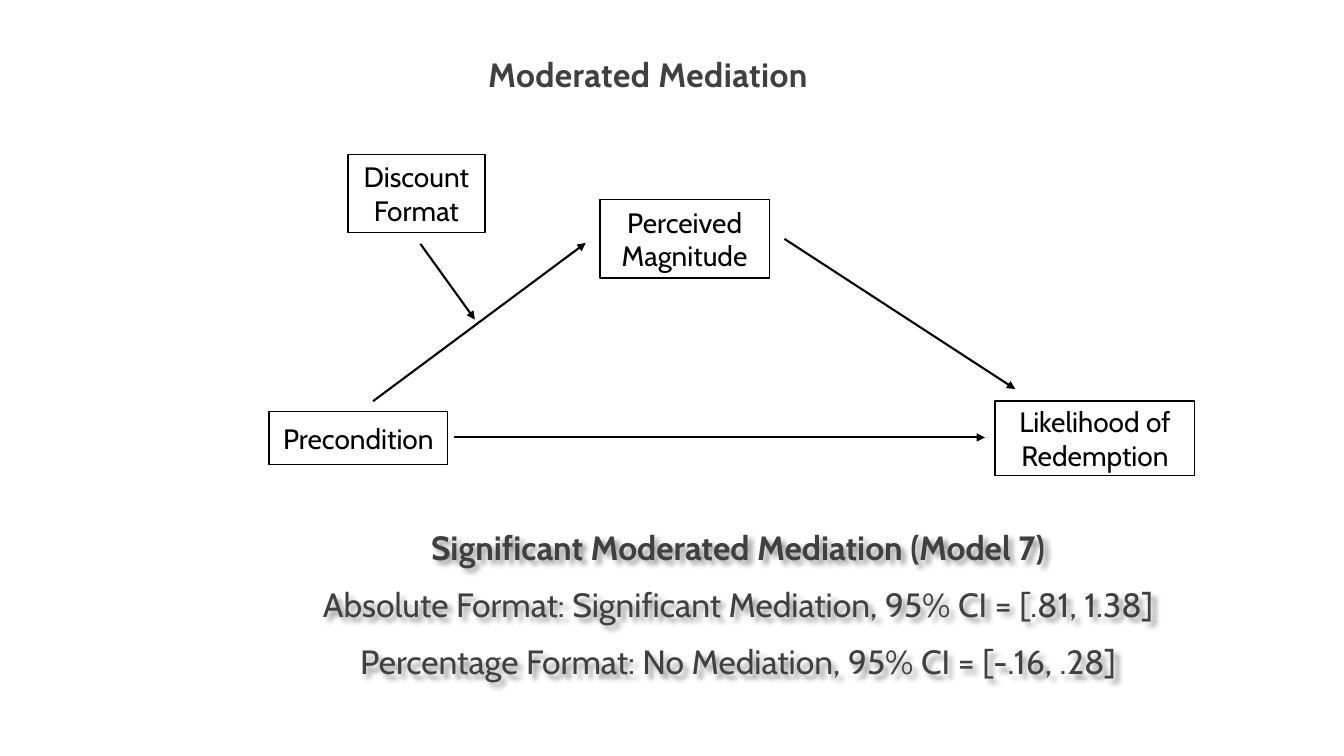
import dataclasses

import lxml.etree
import pptx
import pptx.dml.color
import pptx.enum.shapes
import pptx.enum.text
import pptx.oxml
import pptx.oxml.ns
import pptx.slide
import pptx.text.text
import pptx.util

Inches = pptx.util.Inches
Pt = pptx.util.Pt
ALIGN = pptx.enum.text.PP_ALIGN
ANCHOR = pptx.enum.text.MSO_ANCHOR

FONT = "Cabin"
BLACK = "000000"
GREY = "404040"


@dataclasses.dataclass(frozen=True)
class Variable:
    name: str
    left: float
    top: float
    width: float
    height: float


@dataclasses.dataclass(frozen=True)
class Effect:
    start: tuple[float, float]
    end: tuple[float, float]


VARIABLES = [
    Variable("Precondition", 2.67, 4.08, 1.77, 0.53),
    Variable("Likelihood of Redemption", 9.87, 3.98, 1.98, 0.74),
    Variable("Discount Format", 3.45, 1.53, 1.36, 0.78),
    Variable("Perceived Magnitude", 5.95, 1.98, 1.68, 0.78),
]
EFFECTS = [
    Effect((4.5, 4.34), (9.77, 4.34)),
    Effect((4.17, 2.42), (4.71, 3.17)),
    Effect((3.7, 3.98), (5.81, 2.41)),
    Effect((7.78, 2.37), (10.07, 3.86)),
]
FINDINGS = [
    "Significant Moderated Mediation (Model 7)",
    "Absolute Format: Significant Mediation, 95% CI = [.81, 1.38]",
    "Percentage Format: No Mediation, 95% CI = [-.16, .28]",
]


def color(value: str) -> pptx.dml.color.RGBColor:
    return pptx.dml.color.RGBColor.from_string(value)


def style(paragraph: pptx.text.text._Paragraph, size: float, shade: str,
          alignment: ALIGN = ALIGN.CENTER, bold: bool = False) -> None:
    paragraph.alignment = alignment
    paragraph.font.name = FONT
    paragraph.font.size = Pt(size)
    paragraph.font.bold = bold
    paragraph.font.color.rgb = color(shade)


def add_title(page: pptx.slide.Slide) -> None:
    title = page.shapes.title
    title.left, title.top = Inches(4.77), Inches(0.49)
    title.width, title.height = Inches(4.61), Inches(0.77)
    frame = title.text_frame
    frame.text = "Moderated Mediation"
    frame.auto_size = pptx.enum.text.MSO_AUTO_SIZE.NONE
    frame.vertical_anchor = ANCHOR.TOP
    frame.margin_left, frame.margin_top = Inches(0.07), Inches(0.04)
    frame.margin_right = frame.margin_bottom = 0
    paragraph = frame.paragraphs[0]
    style(paragraph, 24, GREY, ALIGN.LEFT, bold=True)
    paragraph.space_before = Pt(2.6)
    paragraph.runs[0].font._element.set("spc", "30")


def add_variable(page: pptx.slide.Slide, variable: Variable) -> None:
    box = page.shapes.add_shape(
        pptx.enum.shapes.MSO_SHAPE.RECTANGLE,
        Inches(variable.left), Inches(variable.top),
        Inches(variable.width), Inches(variable.height))
    box.shadow.inherit = False
    box.fill.background()
    box.line.color.rgb = color(BLACK)
    box.line.width = Pt(1)
    frame = box.text_frame
    frame.text = variable.name
    frame.word_wrap = True
    frame.vertical_anchor = ANCHOR.MIDDLE
    style(frame.paragraphs[0], 20, BLACK)


def add_effect(page: pptx.slide.Slide, effect: Effect) -> None:
    arrow = page.shapes.add_connector(
        pptx.enum.shapes.MSO_CONNECTOR.STRAIGHT,
        *map(Inches, effect.start + effect.end))
    arrow.line.color.rgb = color(BLACK)
    arrow.line.width = Pt(1.5)
    qn = pptx.oxml.ns.qn
    lxml.etree.SubElement(arrow.line._get_or_add_ln(), qn("a:tailEnd"), type="triangle")
    lxml.etree.SubElement(arrow._element.spPr, qn("a:effectLst"))


def add_findings(page: pptx.slide.Slide) -> None:
    box = page.shapes.add_textbox(Inches(2.39), Inches(5.18), Inches(9.86), Inches(2.27))
    box._element.spPr.append(pptx.oxml.parse_xml(
        f'<a:effectLst {pptx.oxml.ns.nsdecls("a")}>'
        '<a:outerShdw blurRad="50800" dist="38100" dir="2700000">'
        '<a:srgbClr val="000000"><a:alpha val="40000"/></a:srgbClr>'
        '</a:outerShdw></a:effectLst>'))
    frame = box.text_frame
    frame.word_wrap = True
    frame.text = "\n".join(FINDINGS)
    for index, paragraph in enumerate(frame.paragraphs):
        style(paragraph, 24, GREY, bold=index == 0)
        paragraph.space_after = Pt(12)


def main() -> None:
    deck = pptx.Presentation()
    deck.slide_width, deck.slide_height = Inches(13.33), Inches(7.5)
    page = deck.slides.add_slide(deck.slide_layouts.get_by_name("Title Only"))
    add_title(page)
    for variable in VARIABLES:
        add_variable(page, variable)
    for effect in EFFECTS:
        add_effect(page, effect)
    add_findings(page)
    deck.save("out.pptx")


if __name__ == "__main__":
    main()
